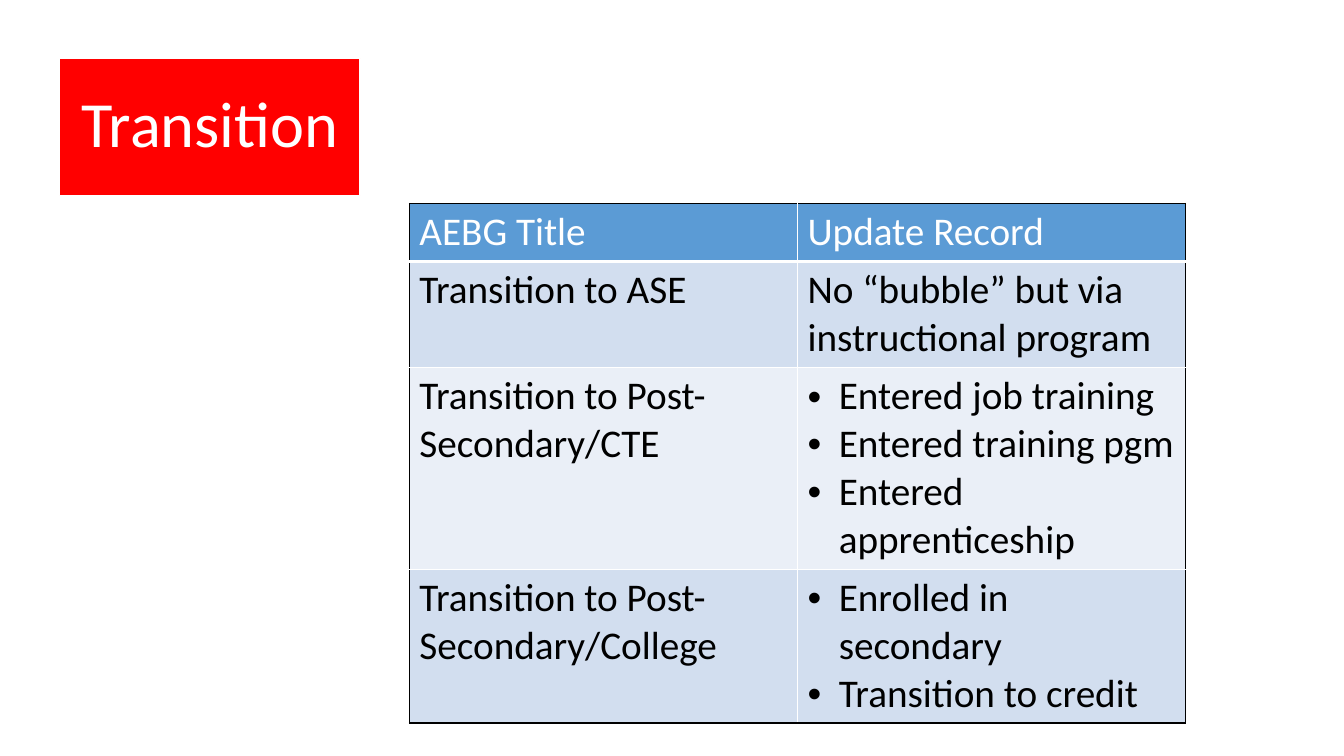
from dataclasses import dataclass

from lxml.etree import SubElement
from pptx import Presentation
from pptx.dml.color import RGBColor
from pptx.enum.shapes import MSO_SHAPE
from pptx.enum.text import MSO_ANCHOR, PP_ALIGN
from pptx.oxml.ns import qn
from pptx.slide import Slide
from pptx.table import _Cell
from pptx.text.text import _Paragraph
from pptx.util import Inches, Pt

WIDE, HIGH = Inches(13.33), Inches(7.5)
FONT = "Calibri"
WHITE = RGBColor(255, 255, 255)
BLACK = RGBColor(0, 0, 0)
RED = RGBColor(255, 0, 0)
BLUE = RGBColor(0x5B, 0x9B, 0xD5)
BANDS = (RGBColor(0xEA, 0xEF, 0xF7), RGBColor(0xD2, 0xDE, 0xEF))


@dataclass(frozen=True)
class Box:
    left: float
    top: float
    width: float
    height: float

    def frame(self) -> tuple[int, int, int, int]:
        return (int(WIDE * self.left), int(HIGH * self.top),
                int(WIDE * self.width), int(HIGH * self.height))


@dataclass(frozen=True)
class Row:
    title: str
    update: str
    share: float
    listed: bool = False


BADGE = Box(0.0443, 0.0773, 0.2236, 0.1813)
GRID = Box(0.3046, 0.2693, 0.5776, 0.676)
ROWS = (
    Row("AEBG Title", "Update Record", 0.11),
    Row("Transition to ASE", "No “bubble” but via instructional program", 0.2),
    Row("Transition to Post-Secondary/CTE",
        "Entered job training\nEntered training pgm\nEntered apprenticeship", 0.39, True),
    Row("Transition to Post-Secondary/College",
        "Enrolled in secondary\nTransition to credit", 0.3, True),
)


def style(para: _Paragraph, size: float, color: RGBColor) -> None:
    for run in para.runs:
        run.font.name = FONT
        run.font.size = Pt(size)
        run.font.bold = False
        run.font.color.rgb = color


def bullet(para: _Paragraph) -> None:
    props = para._p.get_or_add_pPr()
    props.set("marL", str(Inches(0.31)))
    props.set("indent", str(-Inches(0.31)))
    SubElement(props, qn("a:buFont"), typeface="Arial")
    SubElement(props, qn("a:buChar"), char="•")


def border(cell: _Cell, side: str, color: RGBColor, width: float) -> None:
    props = cell._tc.get_or_add_tcPr()
    line = SubElement(props, qn(f"a:ln{side}"), w=str(Pt(width)))
    fill = SubElement(line, qn("a:solidFill"))
    SubElement(fill, qn("a:srgbClr"), val=str(color))


def badge(slide: Slide) -> None:
    shape = slide.shapes.add_shape(MSO_SHAPE.RECTANGLE, *BADGE.frame())
    shape.shadow.inherit = False
    shape.fill.solid()
    shape.fill.fore_color.rgb = RED
    shape.line.color.rgb = WHITE
    shape.line.width = Pt(1)
    frame = shape.text_frame
    frame.text = "Transition"
    frame.word_wrap = True
    frame.vertical_anchor = MSO_ANCHOR.MIDDLE
    frame.margin_left = frame.margin_right = Inches(0.19)
    frame.margin_top = frame.margin_bottom = Inches(0.19)
    para = frame.paragraphs[0]
    para.alignment = PP_ALIGN.CENTER
    para.line_spacing = 0.9
    style(para, 46, WHITE)


def fill_cell(cell: _Cell, text: str, row: int, col: int, listed: bool) -> None:
    head, last = row == 0, row == len(ROWS) - 1
    border(cell, "L", WHITE if col else BLACK, 1)
    border(cell, "R", BLACK if col else WHITE, 1)
    border(cell, "T", BLACK if head else WHITE, 1)
    border(cell, "B", BLACK if last else WHITE, 3 if head else 1)
    cell.fill.solid()
    cell.fill.fore_color.rgb = BLUE if head else BANDS[row % 2]
    cell.text_frame.text = text
    for para in cell.text_frame.paragraphs:
        style(para, 28, WHITE if head else BLACK)
        if listed:
            bullet(para)


def grid(slide: Slide) -> None:
    table = slide.shapes.add_table(len(ROWS), 2, *GRID.frame()).table
    table.first_row = table.horz_banding = False
    for i, row in enumerate(ROWS):
        table.rows[i].height = int(HIGH * GRID.height * row.share)
        fill_cell(table.cell(i, 0), row.title, i, 0, False)
        fill_cell(table.cell(i, 1), row.update, i, 1, row.listed)


def main() -> None:
    deck = Presentation()
    deck.slide_width, deck.slide_height = WIDE, HIGH
    slide = deck.slides.add_slide(deck.slide_layouts[6])
    badge(slide)
    grid(slide)
    deck.save("out.pptx")


if __name__ == "__main__":
    main()
